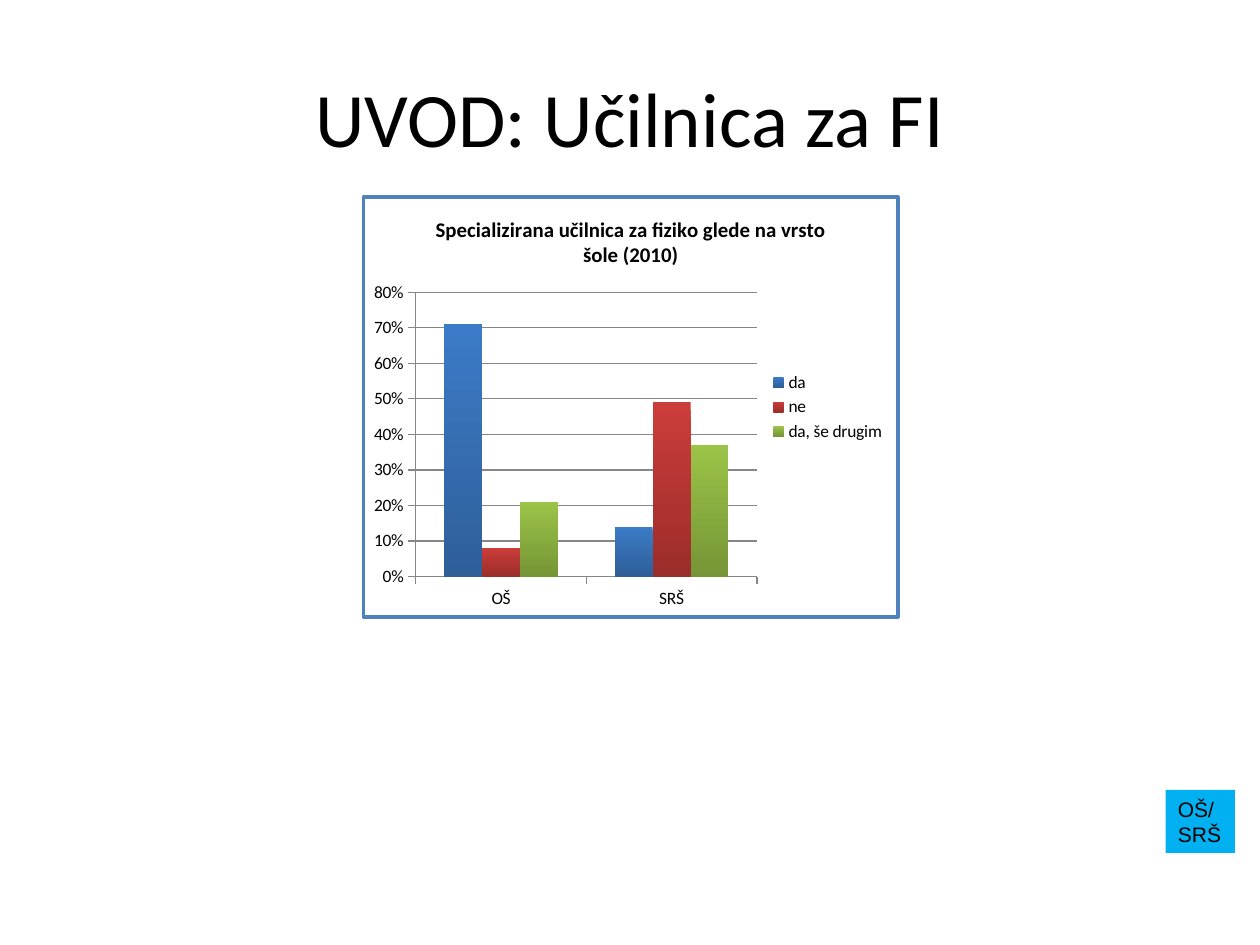
from lxml.etree import fromstring
from pptx import Presentation
from pptx.chart.data import CategoryChartData
from pptx.dml.color import RGBColor
from pptx.enum.chart import XL_CHART_TYPE, XL_LEGEND_POSITION, XL_TICK_MARK
from pptx.enum.shapes import MSO_SHAPE
from pptx.enum.text import MSO_ANCHOR, MSO_AUTO_SIZE, PP_ALIGN
from pptx.util import Inches, Pt

BLACK = RGBColor(0x00, 0x00, 0x00)
WHITE = RGBColor(0xFF, 0xFF, 0xFF)
GRID_GRAY = RGBColor(0x86, 0x86, 0x86)
FRAME_BLUE = RGBColor(0x4F, 0x81, 0xBD)
TAG_BLUE = RGBColor(0x00, 0xB0, 0xF0)
SERIES = [
    ("da", (0.71, 0.14), RGBColor(0x3C, 0x7B, 0xC7), RGBColor(0x2E, 0x5F, 0x99)),
    ("ne", (0.08, 0.49), RGBColor(0xCB, 0x3D, 0x3A), RGBColor(0x9B, 0x2D, 0x2A)),
    ("da, še drugim", (0.21, 0.37), RGBColor(0x9B, 0xC3, 0x48), RGBColor(0x76, 0x95, 0x35)),
]


def style_font(font, size, name="Calibri", bold=False):
    font.size, font.name, font.bold = Pt(size), name, bold
    font.color.rgb = BLACK


deck = Presentation()
deck.slide_width, deck.slide_height = Inches(10), Inches(7.5)
width, height = deck.slide_width, deck.slide_height
page = deck.slides.add_slide(deck.slide_layouts[5])

# Title
title = page.shapes.title
title.left, title.top = int(width * 0.05), int(height * 0.04)
title.width, title.height = int(width * 0.9), Inches(1.25)
title.text_frame.text = "UVOD: Učilnica za FI"
title.text_frame.vertical_anchor = MSO_ANCHOR.MIDDLE
title_para = title.text_frame.paragraphs[0]
title_para.alignment = PP_ALIGN.CENTER
style_font(title_para.font, 44)

# Column chart
chart_data = CategoryChartData(number_format="0%")
chart_data.categories = ["OŠ", "SRŠ"]
for name, values, _, _ in SERIES:
    chart_data.add_series(name, values)
chart = page.shapes.add_chart(
    XL_CHART_TYPE.COLUMN_CLUSTERED, Inches(2.87), Inches(1.55),
    Inches(4.27), Inches(3.36), chart_data).chart
style_font(chart.font, 10)

chart.has_title = True
chart.chart_title.include_in_layout = False
chart.chart_title.text_frame.text = "Specializirana učilnica za fiziko glede na vrsto šole (2010)"
style_font(chart.chart_title.text_frame.paragraphs[0].font, 12, bold=True)

chart.has_legend = True
chart.legend.position = XL_LEGEND_POSITION.RIGHT
chart.legend.include_in_layout = False

percent_axis = chart.value_axis
percent_axis.minimum_scale, percent_axis.maximum_scale = 0, 0.8
percent_axis.major_unit = 0.1
percent_axis.tick_labels.number_format = "0%"
percent_axis.tick_labels.number_format_is_linked = False
percent_axis.has_major_gridlines = True
for axis in (chart.category_axis, percent_axis):
    axis.major_tick_mark = XL_TICK_MARK.OUTSIDE
    axis.format.line.color.rgb = GRID_GRAY
percent_axis.major_gridlines.format.line.color.rgb = GRID_GRAY

plot = chart.plots[0]
plot.vary_by_categories = False
plot.gap_width = 150
for series, (_, _, top_color, bottom_color) in zip(plot.series, SERIES):
    fill = series.format.fill
    fill.gradient()
    fill.gradient_angle = 270
    for stop, color, position in zip(fill.gradient_stops, (top_color, bottom_color), (0, 1)):
        stop.color.rgb = color
        stop.position = position

# Chart frame: the properties must follow c:chart directly
chart_frame = fromstring(
    '<c:spPr xmlns:c="http://schemas.openxmlformats.org/drawingml/2006/chart"'
    ' xmlns:a="http://schemas.openxmlformats.org/drawingml/2006/main">'
    f'<a:solidFill><a:srgbClr val="{WHITE}"/></a:solidFill>'
    f'<a:ln w="{Pt(2)}"><a:solidFill><a:srgbClr val="{FRAME_BLUE}"/></a:solidFill></a:ln>'
    '</c:spPr>')
chart.element.chart.addnext(chart_frame)

# School type tag
tag = page.shapes.add_shape(
    MSO_SHAPE.RECTANGLE, Inches(9.25), Inches(6.27), Inches(0.55), Inches(0.5))
tag.shadow.inherit = False
tag.fill.solid()
tag.fill.fore_color.rgb = TAG_BLUE
tag.line.fill.background()
tag.text_frame.word_wrap = True
tag.text_frame.auto_size = MSO_AUTO_SIZE.SHAPE_TO_FIT_TEXT
tag.text_frame.vertical_anchor = MSO_ANCHOR.TOP
tag.text_frame.text = "OŠ/SRŠ"
tag_para = tag.text_frame.paragraphs[0]
tag_para.alignment = PP_ALIGN.LEFT
style_font(tag_para.font, 12, "Arial")

deck.save("out.pptx")
